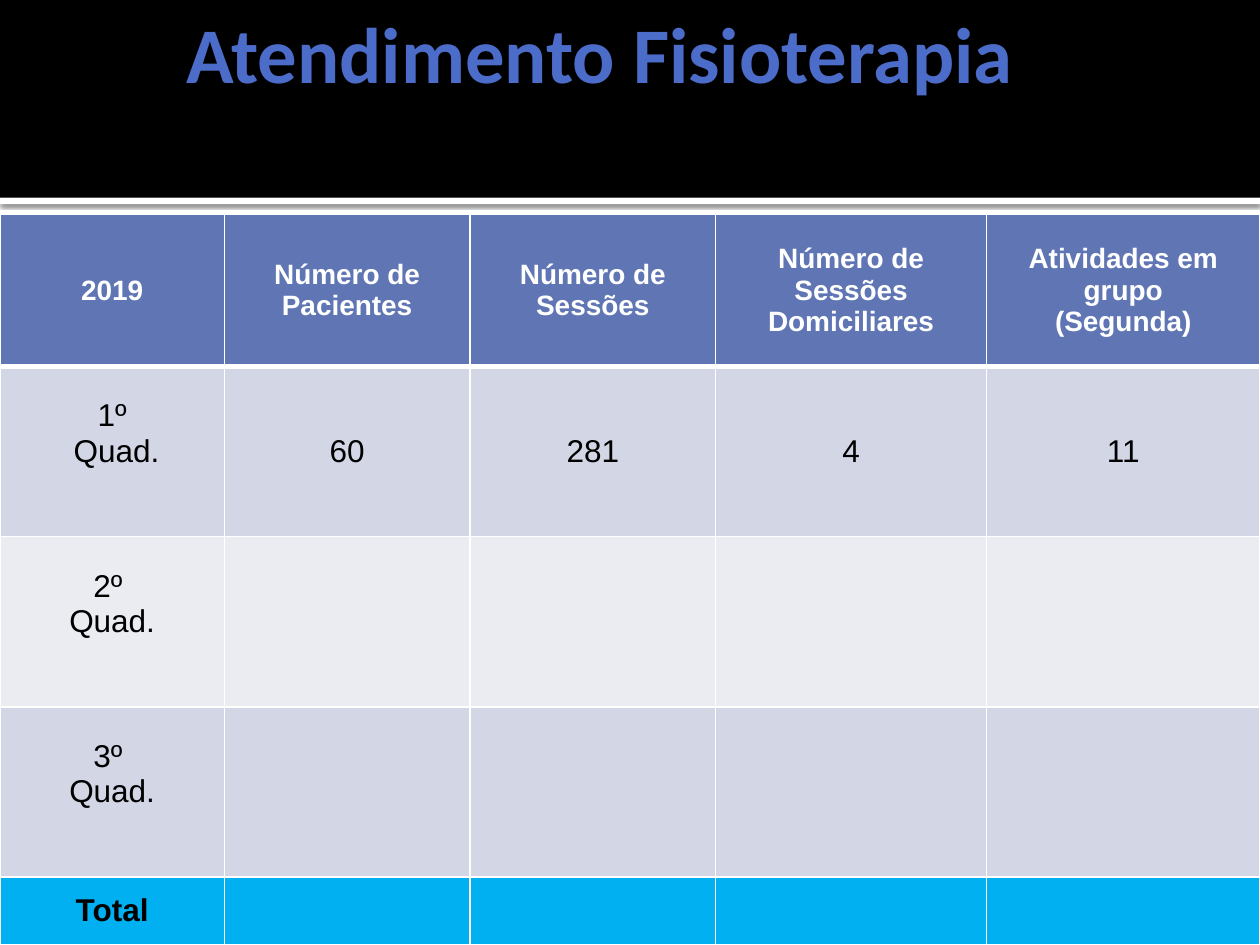
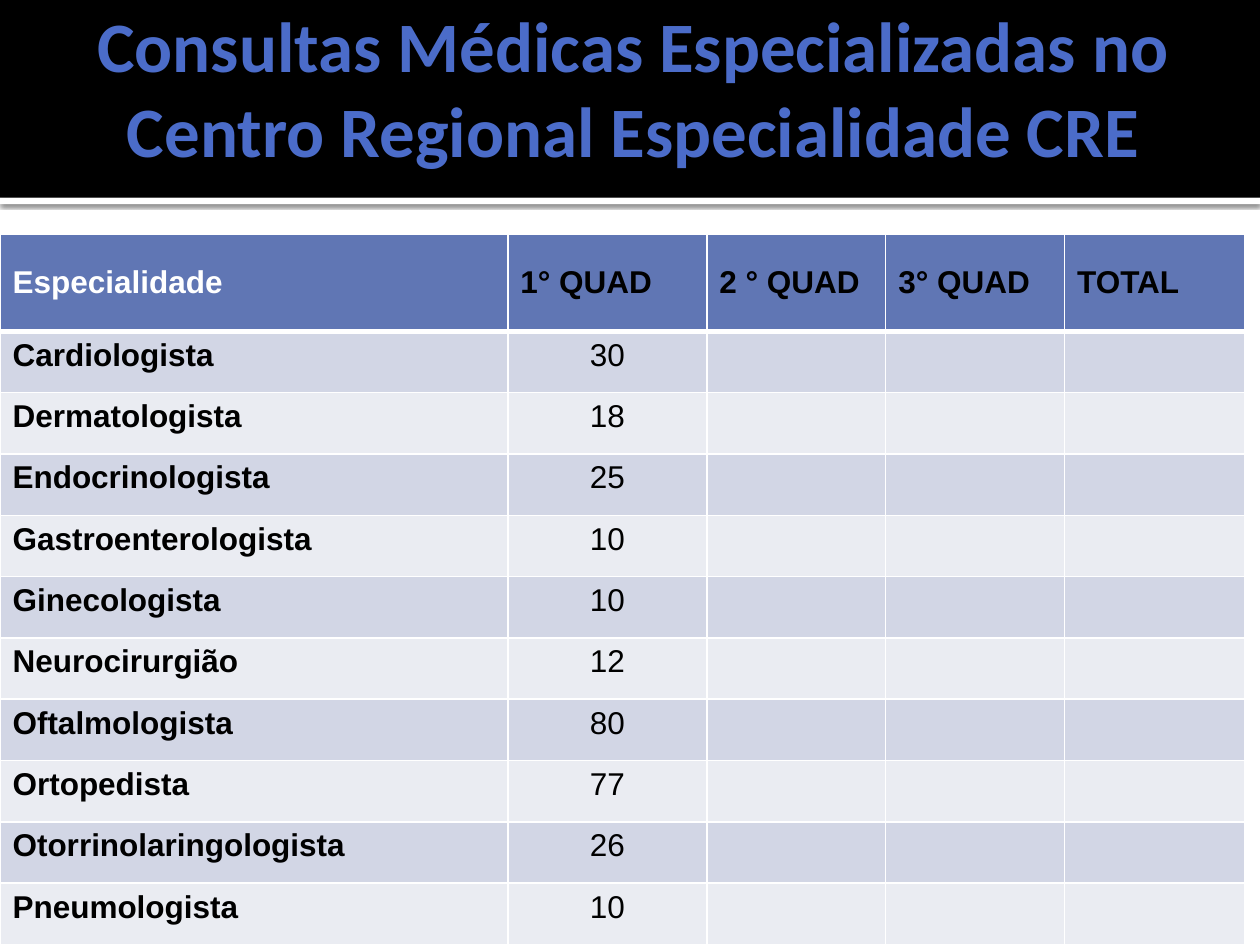
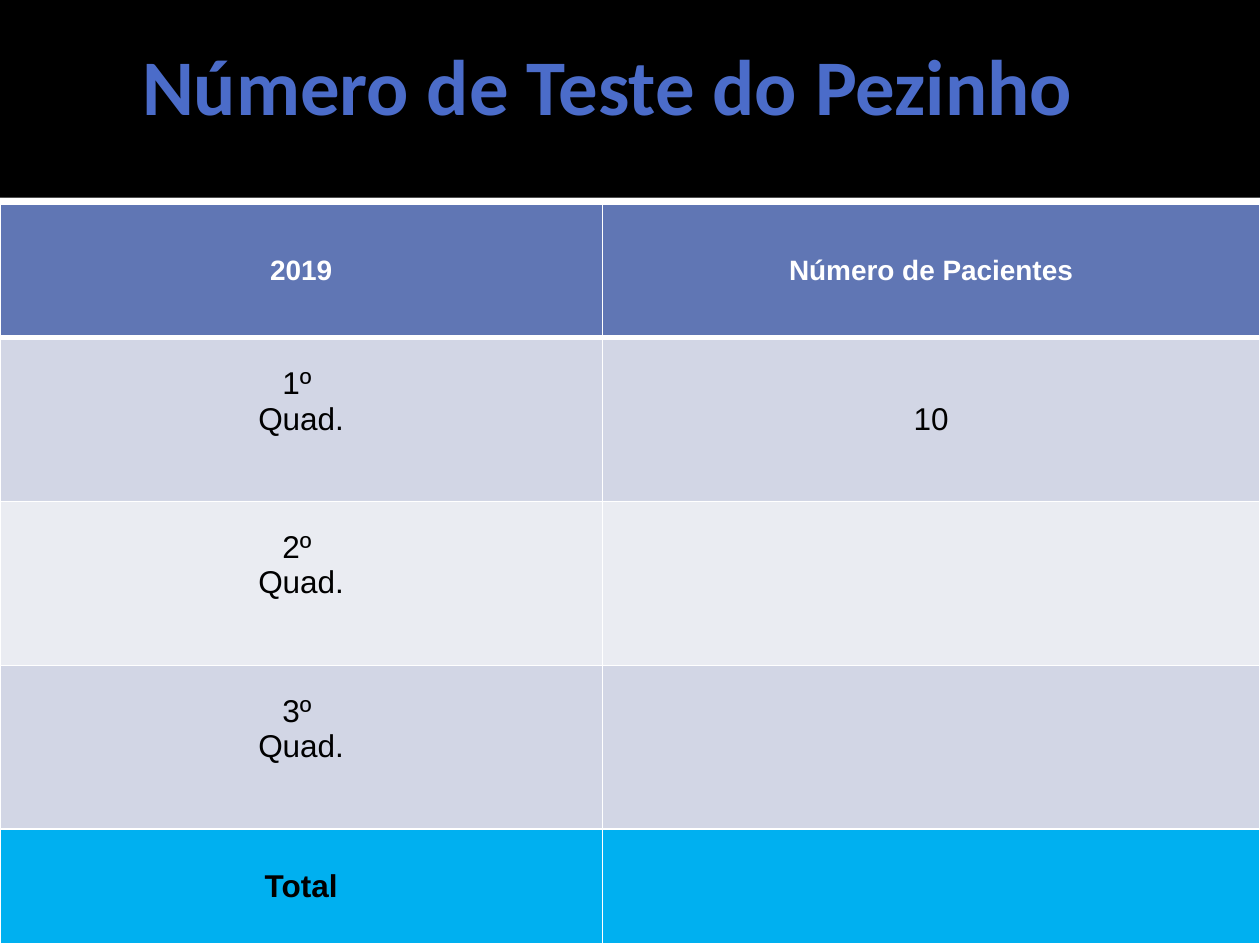
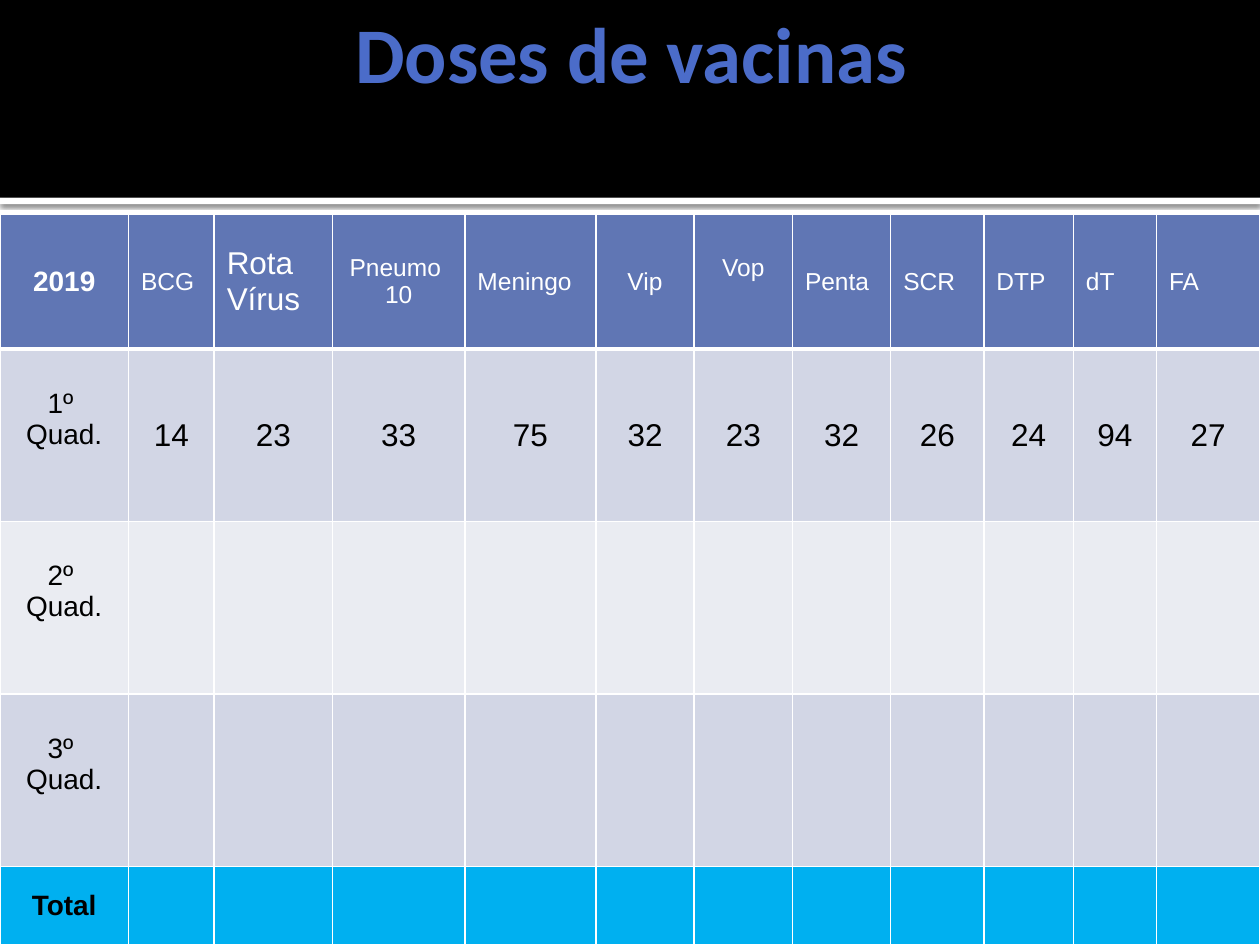
import pptx
import pptx.util
import pptx.dml.color
import pptx.enum.shapes
import pptx.enum.text
import pptx.oxml
from lxml import etree
from pptx.oxml.ns import qn

Inches = pptx.util.Inches
Pt = pptx.util.Pt
LEFT = pptx.enum.text.PP_ALIGN.LEFT
CENTER = pptx.enum.text.PP_ALIGN.CENTER
TOP = pptx.enum.text.MSO_ANCHOR.TOP
MIDDLE = pptx.enum.text.MSO_ANCHOR.MIDDLE

SLIDE_W, SLIDE_H = 10, 7.5
BAND_H = 1.57
BLACK, WHITE = "000000", "FFFFFF"
TITLE_BLUE, HEADER_BLUE, TOTAL_BLUE = "4B6CC9", "6076B4", "00B0F0"
STRIPES = ("D2D6E5", "EAECF2")
QUADS = ("1º \nQuad.", "2º \nQuad.", "3º \nQuad.")


def color(value):
    return pptx.dml.color.RGBColor.from_string(value)


def style_text(frame, font, size, text_color, bold, align):
    for paragraph in frame.paragraphs:
        paragraph.alignment = align
        paragraph.font.name = font
        paragraph.font.size = Pt(size)
        paragraph.font.bold = bold
        paragraph.font.color.rgb = color(text_color)


def add_bar(slide, top, height, fill):
    bar = slide.shapes.add_shape(pptx.enum.shapes.MSO_SHAPE.RECTANGLE, 0, Inches(top),
                                 Inches(SLIDE_W), Inches(height))
    bar.shadow.inherit = False
    bar.fill.solid()
    bar.fill.fore_color.rgb = color(fill)
    bar.line.fill.background()
    return bar


def add_title_band(slide):
    """White rule with a soft shadow, below a black band."""
    rule = add_bar(slide, BAND_H, 0.05, WHITE)
    effects = rule._element.spPr.find(qn("a:effectLst"))
    shadow = etree.SubElement(effects, qn("a:outerShdw"), blurRad=str(Pt(2.5)),
                              dist=str(Pt(0.8)), dir="5400000", algn="tl", rotWithShape="0")
    shade = etree.SubElement(shadow, qn("a:srgbClr"), val=BLACK)
    etree.SubElement(shade, qn("a:alpha"), val="60000")
    add_bar(slide, 0, BAND_H, BLACK)


def add_title(slide, text, left, top, width, size=45, align=LEFT):
    title = slide.shapes.add_textbox(Inches(left), Inches(top), Inches(width), Inches(1.37))
    frame = title.text_frame
    frame.word_wrap = True
    frame.vertical_anchor = MIDDLE
    frame.margin_right = Inches(0.05)
    frame.text = text
    style_text(frame, "Calibri", size, TITLE_BLUE, True, align)


def border_cell(cell, bottom_width):
    properties = cell._tc.get_or_add_tcPr()
    widths = {"a:lnL": 1, "a:lnR": 1, "a:lnT": 1, "a:lnB": bottom_width}
    for position, (side, width) in enumerate(widths.items()):
        line = etree.Element(qn(side), w=str(Pt(width)))
        fill = etree.SubElement(line, qn("a:solidFill"))
        etree.SubElement(fill, qn("a:srgbClr"), val=WHITE)
        properties.insert(position, line)


def write_cell(cell, text, size, text_color=BLACK, bold=False, align=CENTER,
               anchor=MIDDLE, raised=False):
    cell.text = text
    cell.vertical_anchor = anchor
    if raised:  # keep one line free below the text
        cell.margin_bottom = Inches(0.05) + Pt(size * 1.15)
    style_text(cell.text_frame, "Arial", size, text_color, bold, align)


def add_grid(slide, top, columns, rows, has_total):
    """Empty table with header, striped rows and an optional total row."""
    grid = slide.shapes.add_table(len(rows), len(columns), 0, Inches(top),
                                  Inches(sum(columns)), Inches(sum(rows))).table
    for column, width in zip(grid.columns, columns):
        column.width = Inches(width)
    for index, (row, height) in enumerate(zip(grid.rows, rows)):
        row.height = Inches(height)
        if index == 0:
            fill = HEADER_BLUE
        elif has_total and index == len(rows) - 1:
            fill = TOTAL_BLUE
        else:
            fill = STRIPES[(index - 1) % 2]
        for cell in row.cells:
            cell.fill.solid()
            cell.fill.fore_color.rgb = color(fill)
            border_cell(cell, 3 if index == 0 else 1)
    return grid


def add_quad_table(slide, top, columns, rows, headers, counts, quads=QUADS, label_size=18):
    """Table by four-month period; a header is a dict of its text and style."""
    grid = add_grid(slide, top, columns, rows, has_total=True)
    for index, header in enumerate(headers):
        write_cell(grid.cell(0, index), **{"size": 16, "bold": True, "text_color": WHITE, **header})
    for index, quad in enumerate(quads, 1):
        write_cell(grid.cell(index, 0), quad, label_size, raised=True)
    for index, count in enumerate(counts, 1):
        write_cell(grid.cell(1, index), str(count), 18)
    write_cell(grid.cell(len(rows) - 1, 0), "Total", label_size, bold=True)


def add_specialty_table(slide, top, columns, headers, consultations):
    header_h = 0.77
    row_h = (SLIDE_H - top - header_h) / len(consultations)
    grid = add_grid(slide, top, columns, [header_h] + [row_h] * len(consultations),
                    has_total=False)
    for index, header in enumerate(headers):
        write_cell(grid.cell(0, index), header, 18, BLACK if index else WHITE, True, LEFT)
    for index, (specialty, count) in enumerate(consultations.items(), 1):
        write_cell(grid.cell(index, 0), specialty, 18, bold=True, align=LEFT, anchor=TOP)
        write_cell(grid.cell(index, 1), str(count), 18, anchor=TOP)


def build_physiotherapy(slide):
    add_title(slide, "Atendimento Fisioterapia", 1.38, -0.27, 10)
    headers = ("2019", "Número de Pacientes", "Número de Sessões",
               "Número de Sessões Domiciliares", "Atividades em grupo\n(Segunda)")
    add_quad_table(slide, 1.7, (1.78, 1.95, 1.95, 2.15, 2.17), (1.21, 1.35, 1.35, 1.35, 0.54),
                   [{"text": text} for text in headers], (60, 281, 4, 11),
                   quads=("1º\n Quad.",) + QUADS[1:])


def build_consultations(slide):
    add_title(slide, "Consultas Médicas Especializadas no Centro Regional Especialidade CRE",
              0.01, 0, 9.99, 40.5, CENTER)
    add_specialty_table(
        slide, 1.86, (4.03, 1.58, 1.42, 1.42, 1.43),
        ("Especialidade", "1° QUAD", "2 ° QUAD", "3° QUAD", "TOTAL"),
        {"Cardiologista": 30, "Dermatologista": 18, "Endocrinologista": 25,
         "Gastroenterologista": 10, "Ginecologista": 10, "Neurocirurgião": 12,
         "Oftalmologista": 80, "Ortopedista": 77, "Otorrinolaringologista": 26,
         "Pneumologista": 10})


def build_heel_prick(slide):
    add_title(slide, "Número de Teste do Pezinho", 1.03, -0.02, 9)
    add_quad_table(slide, 1.62, (4.78, 5.22), (1.06, 1.3, 1.3, 1.3, 0.91),
                   [{"text": "2019"}, {"text": "Número de Pacientes"}], (10,))


def build_vaccines(slide):
    add_title(slide, "Doses de vacinas", 2.72, -0.27, 9)
    plain = {"size": 14, "bold": False}
    left = {**plain, "align": LEFT}
    headers = [
        {"text": "2019"},
        {**left, "text": "BCG"},
        {**left, "text": "Rota\nVírus", "size": 18},
        {**plain, "text": "Pneumo \n10"},
        {**left, "text": "Meningo"},
        {**plain, "text": "Vip"},
        {**plain, "text": "Vop", "raised": True},
    ] + [{**left, "text": text} for text in ("Penta", "SCR", "DTP", "dT", "FA")]
    add_quad_table(slide, 1.7,
                   (1.02, 0.68, 0.94, 1.05, 1.04, 0.78, 0.78, 0.78, 0.74, 0.71, 0.66, 0.82),
                   (1.07, 1.37, 1.37, 1.37, 0.62), headers,
                   (14, 23, 33, 75, 32, 23, 32, 26, 24, 94, 27), label_size=16)


def main():
    deck = pptx.Presentation()
    deck.slide_width, deck.slide_height = Inches(SLIDE_W), Inches(SLIDE_H)
    for build in (build_physiotherapy, build_consultations, build_heel_prick, build_vaccines):
        slide = deck.slides.add_slide(deck.slide_layouts[6])
        add_title_band(slide)
        build(slide)
    deck.save("out.pptx")


if __name__ == "__main__":
    main()
